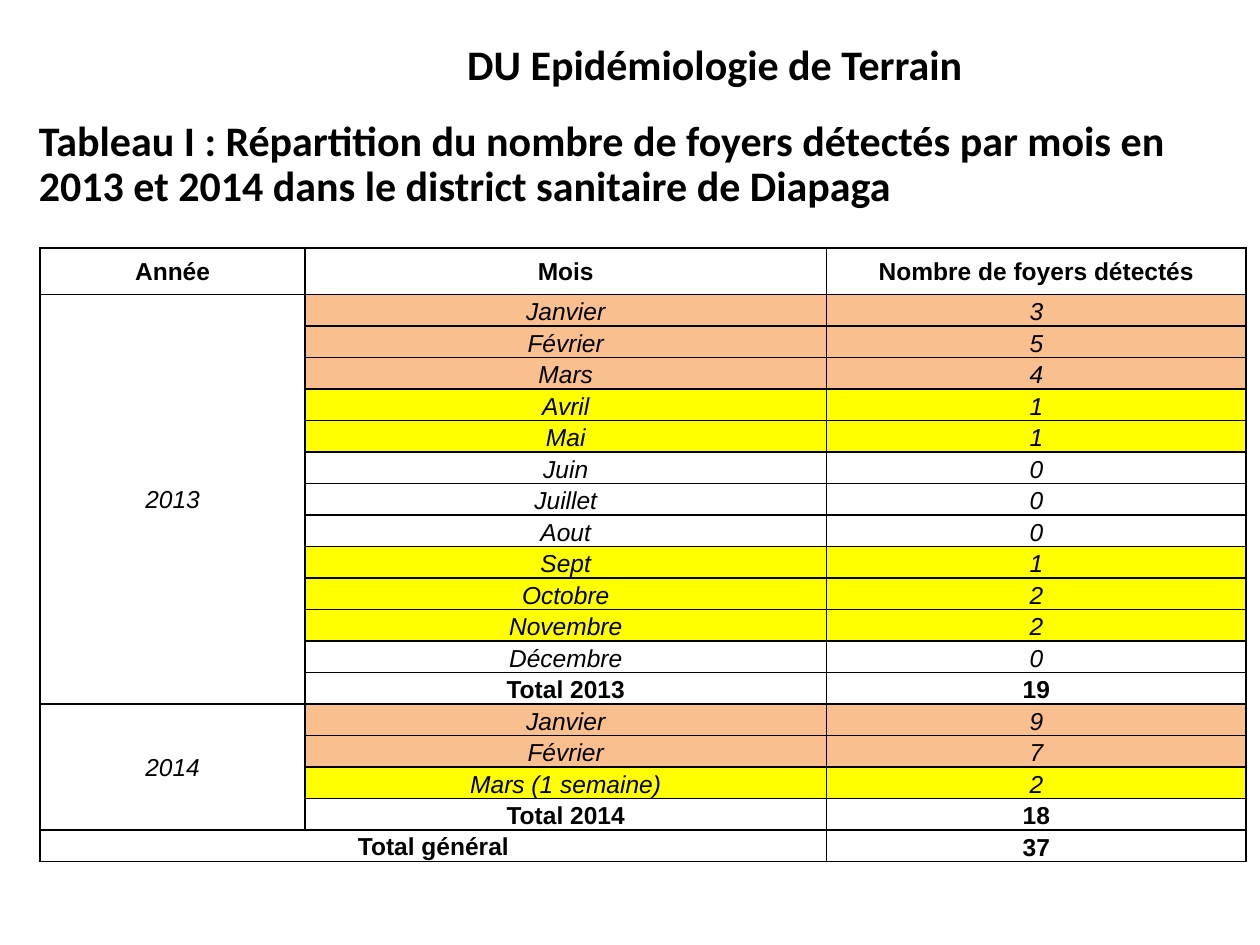
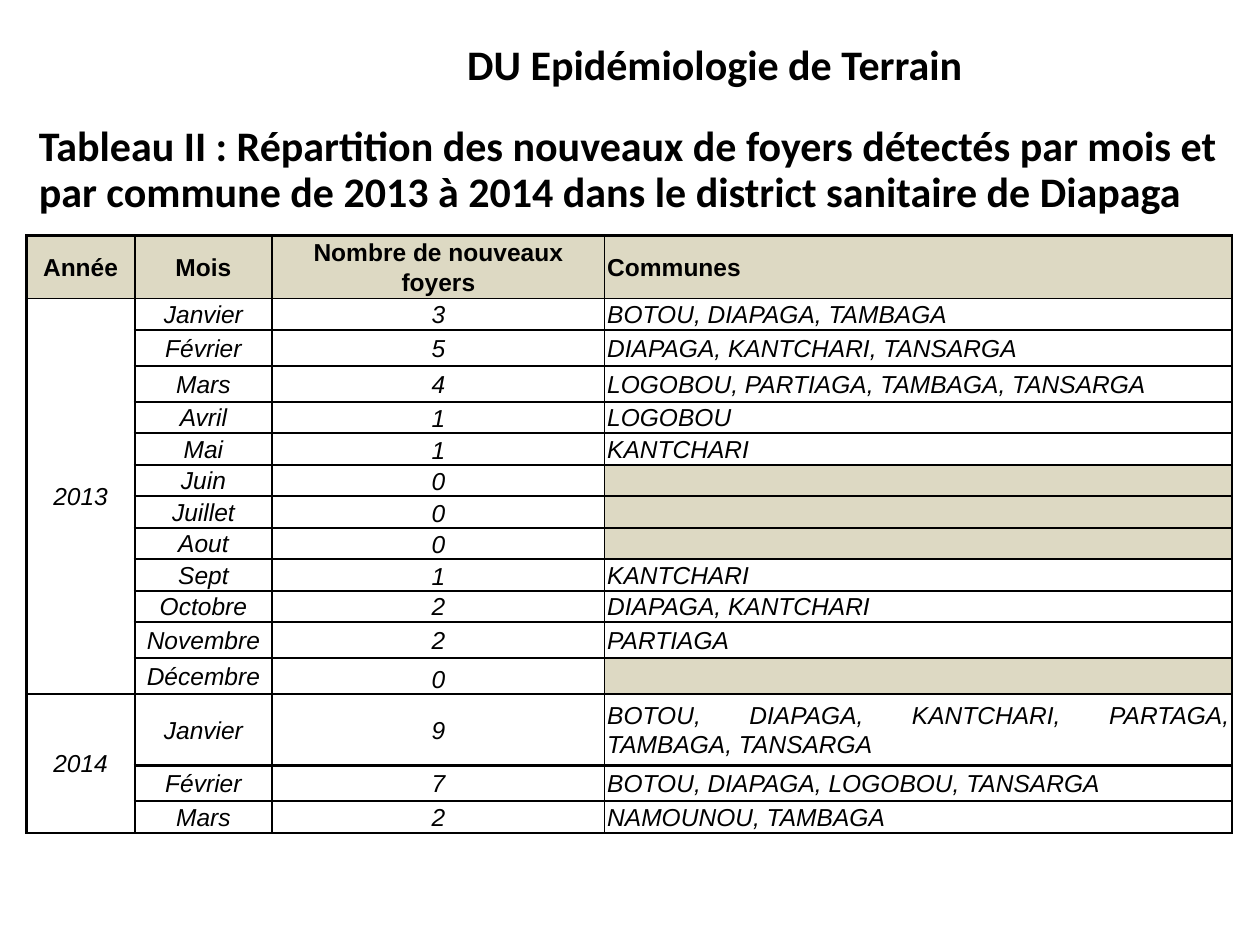
from typing import NamedTuple

from lxml.etree import SubElement
from pptx import Presentation
from pptx.dml.color import RGBColor
from pptx.enum.text import MSO_ANCHOR as Anchor, MSO_AUTO_SIZE as AutoSize, PP_ALIGN as Align
from pptx.oxml.ns import qn
from pptx.util import Inches, Pt

BLACK, ORANGE, YELLOW, BEIGE = "000000", "FABF8F", "FFFF00", "DDD9C3"
COURSE = "DU Epidémiologie de Terrain"
TITLES = (
    "Tableau I : Répartition du nombre de foyers détectés par mois en 2013 et 2014 "
    "dans le district sanitaire de Diapaga",
    "Tableau II : Répartition des nouveaux de foyers détectés par mois et par commune "
    "de 2013 à 2014 dans le district sanitaire de Diapaga",
)
MONTH_HEADERS = ("Année", "Mois", "Nombre de foyers détectés")
COMMUNE_HEADERS = ("Année", "Mois", "Nombre de nouveaux foyers", "Communes")
OUTBREAKS = {
    "2013": [
        ("Janvier", 3, "BOTOU, DIAPAGA, TAMBAGA"),
        ("Février", 5, "DIAPAGA, KANTCHARI, TANSARGA"),
        ("Mars", 4, "LOGOBOU, PARTIAGA, TAMBAGA, TANSARGA"),
        ("Avril", 1, "LOGOBOU"),
        ("Mai", 1, "KANTCHARI"),
        ("Juin", 0, ""),
        ("Juillet", 0, ""),
        ("Aout", 0, ""),
        ("Sept", 1, "KANTCHARI"),
        ("Octobre", 2, "DIAPAGA, KANTCHARI"),
        ("Novembre", 2, "PARTIAGA"),
        ("Décembre", 0, ""),
    ],
    "2014": [
        ("Janvier", 9, "BOTOU, DIAPAGA, KANTCHARI, PARTAGA, TAMBAGA, TANSARGA"),
        ("Février", 7, "BOTOU, DIAPAGA, LOGOBOU, TANSARGA"),
        ("Mars (1 semaine)", 2, "NAMOUNOU, TAMBAGA"),
    ],
}


class Entry(NamedTuple):
    text: str
    bold: bool = False
    fill: str = ""
    anchor: Anchor = Anchor.MIDDLE
    align: Align = Align.CENTER


def rgb(value):
    return RGBColor.from_string(value)


def set_font(para, name, size, bold, italic=False):
    font = para.font
    font.name, font.size, font.bold, font.italic = name, Pt(size), bold, italic
    font.color.rgb = rgb(BLACK)


def add_heading(page, text, left, top, width, height, wrap):
    box = page.shapes.add_textbox(*map(Inches, (left, top, width, height)))
    frame = box.text_frame
    frame.word_wrap = wrap
    frame.auto_size = AutoSize.NONE if wrap else AutoSize.SHAPE_TO_FIT_TEXT
    frame.vertical_anchor = Anchor.MIDDLE if wrap else Anchor.TOP
    para = frame.paragraphs[0]
    para.text = text
    if wrap:
        para.line_spacing = 0.9
    set_font(para, "Calibri", 24, True)


def add_page(deck, title, title_height):
    page = deck.slides.add_slide(deck.slide_layouts[6])
    add_heading(page, COURSE, 3.61, 0.26, 4.17, 0.5, False)
    add_heading(page, title, 0.21, 0.94, 9.79, title_height, True)
    return page


def month_rows():
    """Rows of the first table, with a subtotal after each year."""
    rows = [[Entry(text, bold=True) for text in MONTH_HEADERS]]
    for year, months in OUTBREAKS.items():
        for month, count, _ in months:
            fill = ORANGE if count > 2 else YELLOW if count else ""
            rows.append([Entry(year)] + [Entry(text, fill=fill, anchor=Anchor.BOTTOM)
                                         for text in (month, str(count))])
        subtotal = sum(count for _, count, _ in months)
        rows.append([Entry(year)] + [Entry(text, bold=True, anchor=Anchor.BOTTOM)
                                     for text in (f"Total {year}", str(subtotal))])
    total = sum(count for months in OUTBREAKS.values() for _, count, _ in months)
    rows.append([Entry("Total général", bold=True), Entry(""),
                 Entry(str(total), bold=True, anchor=Anchor.BOTTOM)])
    return rows


def commune_rows():
    rows = [[Entry(text, bold=True, fill=BEIGE,
                   align=Align.LEFT if text == "Communes" else Align.CENTER)
             for text in COMMUNE_HEADERS]]
    for year, months in OUTBREAKS.items():
        for month, count, communes in months:
            rows.append([
                Entry(year),
                Entry(month.split(" (")[0]),
                Entry(str(count), anchor=Anchor.MIDDLE if count > 1 else Anchor.BOTTOM),
                Entry(communes, fill="" if communes else BEIGE, align=Align.JUSTIFY),
            ])
    return rows


def draw_border(cell, side, width):
    line = SubElement(cell._tc.get_or_add_tcPr(), qn(f"a:ln{side}"), w=str(Pt(width)))
    color = SubElement(SubElement(line, qn("a:solidFill")), qn("a:srgbClr"))
    color.set("val", BLACK)


def fill_cell(cell, entry, margin, italic):
    cell.margin_left = cell.margin_right = Inches(margin)
    cell.margin_top = cell.margin_bottom = 0
    cell.vertical_anchor = entry.anchor
    para = cell.text_frame.paragraphs[0]
    para.alignment, para.line_spacing = entry.align, 1.07
    if entry.text:
        para.text = entry.text
    else:
        SubElement(para._p, qn("a:endParaRPr"), sz="1400")
    set_font(para, "Arial", 14, entry.bold, italic)
    if entry.fill:
        cell.fill.solid()
        cell.fill.fore_color.rgb = rgb(entry.fill)
    else:
        cell.fill.background()


def add_grid(page, rows, place, widths, heights, spans, margin, vertical, horizontal):
    """Table whose row heights share the height of place in proportion to heights.

    vertical holds a line width per column edge; horizontal(edge, column) gives the others.
    """
    frame = page.shapes.add_table(len(rows), len(widths), *map(Inches, place))
    table = frame.table
    table.first_row = table.horz_banding = False
    for column, width in zip(table.columns, widths):
        column.width = Inches(width)
    for row, height in zip(table.rows, heights):
        row.height = Inches(height * place[3] / sum(heights))
    for (top, left), (bottom, right) in spans:
        table.cell(top, left).merge(table.cell(bottom, right))
    for r, entries in enumerate(rows):
        for c, entry in enumerate(entries):
            cell = table.cell(r, c)
            if cell.is_spanned:
                cell.fill.background()
                continue
            below, after = r + 1, c + 1
            if cell.is_merge_origin:
                below, after = r + cell.span_height, c + cell.span_width
            draw_border(cell, "L", vertical[c])
            draw_border(cell, "R", vertical[after])
            draw_border(cell, "T", horizontal(r, c))
            draw_border(cell, "B", horizontal(below, c))
            fill_cell(cell, entry, margin, italic=not entry.bold)


def year_spans(rows):
    """Merges of the first column, one for each year."""
    years = [row[0].text for row in rows]
    starts = [(years.index(year), years.count(year)) for year in OUTBREAKS]
    return [((start, 0), (start + size - 1, 0)) for start, size in starts]


def main():
    deck = Presentation()
    deck.slide_width, deck.slide_height = Inches(10), Inches(7.5)

    rows = month_rows()
    spans = year_spans(rows)
    second_year = spans[1][0][0]
    last = len(rows) - 1
    add_grid(
        add_page(deck, TITLES[0], 0.74), rows, (0.32, 1.97, 9.57, 4.58),
        (2.1, 4.14, 3.33), [0.36] + [0.23] * last,
        spans + [((last, 0), (last, 1))], 0.04, (1.5, 1, 1, 1),
        lambda edge, column: 1.5 if (edge, column) == (second_year, 0) else 1,
    )

    rows = commune_rows()
    heights = [0.46] + [0.24] * (len(rows) - 1)
    for tall in (2, 3, 11, 12, 14):
        heights[tall] = 0.28
    heights[13] = 0.56
    add_grid(
        add_page(deck, TITLES[1], 0.83), rows, (0.21, 1.87, 9.57, 4.65),
        (0.86, 1.09, 2.64, 4.98), heights, year_spans(rows), 0.02, (1.5, 1.5, 1, 1, 1),
        lambda edge, column: 1 if edge == 1 or (edge, column) == (len(rows), 0) else 1.5,
    )
    deck.save("out.pptx")


if __name__ == "__main__":
    main()
